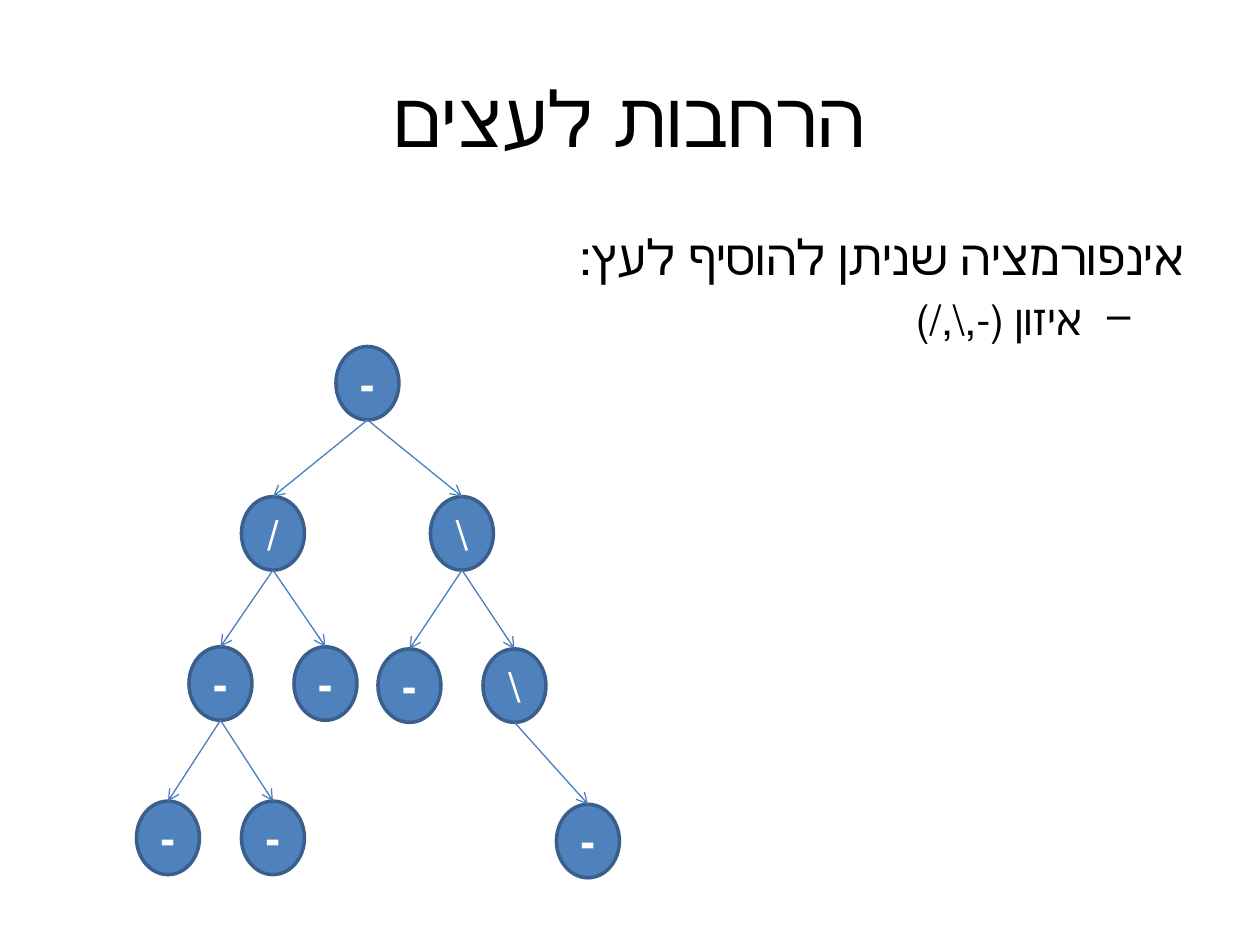
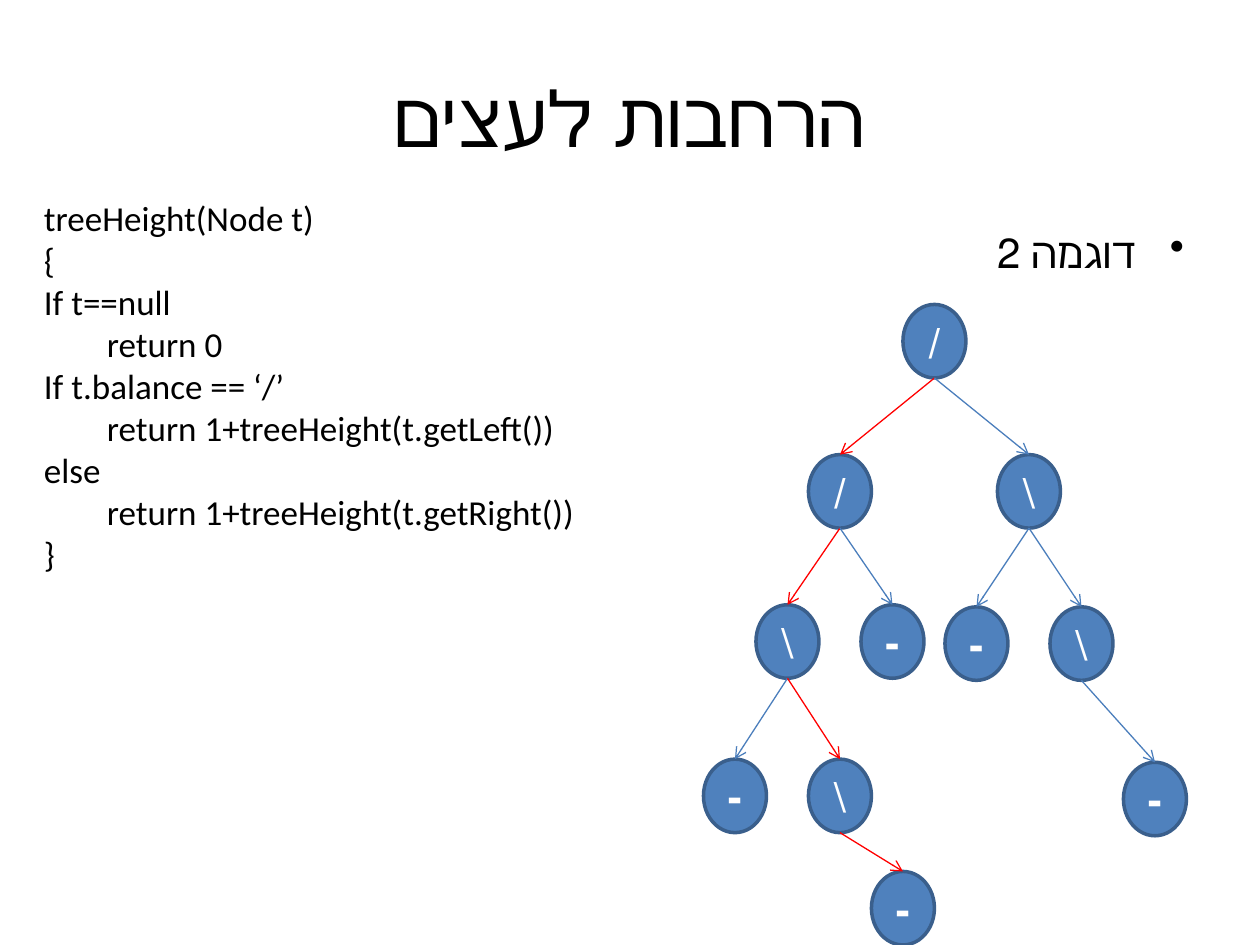
from dataclasses import dataclass

from pptx import Presentation
from pptx import util as u
from pptx.dml.color import RGBColor
from pptx.enum import lang, shapes, text
from pptx.oxml import ns, xmlchemy


@dataclass(frozen=True)
class Theme:
    """Colours, type sizes and line widths shared by all slides."""

    font: str = "Calibri"
    ink: str = "000000"
    light: str = "FFFFFF"
    node: str = "4F81BD"
    rim: str = "3A5F8C"
    edge: str = "4B7EBC"
    trail: str = "FF0000"
    title: int = 44
    lead: int = 28
    body: int = 24
    code: int = 20
    rim_width: float = 2
    edge_width: float = 0.75


@dataclass(frozen=True)
class Line:
    """One paragraph of text, with its indent in inches."""

    words: str
    size: int
    margin: float = 0
    hanging: float = 0
    bullet: str = ""


THEME = Theme()
COLUMNS, ROWS = 120, 90
NODE_WIDTH, NODE_HEIGHT = 6, 7
ALIGN = text.PP_ALIGN
ANCHOR = text.MSO_ANCHOR
TITLE = "הרחבות לעצים"

PLACES = {
    "": (0, 0),
    "L": (-9, 14.3), "R": (9, 14.3),
    "LL": (-14, 28.6), "LR": (-4, 28.6), "RL": (4, 28.8), "RR": (14, 28.8),
    "LLL": (-19, 43.3), "LLR": (-9, 43.3), "RRR": (21, 43.6),
    "LLRR": (-3, 54),
}
BALANCED_SIGNS = {
    "": "-", "L": "/", "R": "\\", "LL": "-", "LR": "-", "RL": "-",
    "RR": "\\", "LLL": "-", "LLR": "-", "RRR": "-",
}
DEEP_SIGNS = BALANCED_SIGNS | {"": "/", "LL": "\\", "LLR": "\\", "LLRR": "-"}
CODE = [
    (0, "treeHeight(Node t)"),
    (0, "{"),
    (0, "If t==null"),
    (1, "return 0"),
    (0, "If t.balance == ‘/’"),
    (1, "return 1+treeHeight(t.getLeft())"),
    (0, "else"),
    (1, "return 1+treeHeight(t.getRight())"),
    (0, "}"),
]


class Slides:
    """Draws styled elements on the current slide, in grid units."""

    def __init__(self, theme):
        """Start an empty deck."""
        self.theme = theme
        self.deck = Presentation()
        self.deck.slide_width, self.deck.slide_height = u.Inches(10), u.Inches(7.5)
        self.page = None

    def x(self, columns):
        """Turn columns into a length."""
        return round(self.deck.slide_width * columns / COLUMNS)

    def y(self, rows):
        """Turn rows into a length."""
        return round(self.deck.slide_height * rows / ROWS)

    def area(self, left, top, width, height):
        """Turn a grid rectangle into lengths."""
        return self.x(left), self.y(top), self.x(width), self.y(height)

    def start(self, title):
        """Add a slide with its title."""
        self.page = self.deck.slides.add_slide(self.deck.slide_layouts[6])
        box = self.text_box(6, 3.6, 108, 15, [Line(title, self.theme.title)], ALIGN.CENTER, True)
        box.text_frame.vertical_anchor = ANCHOR.MIDDLE

    def add_span(self, para, line, align, rtl, colour, bold=False):
        """Fill a paragraph with one styled run."""
        para.alignment = align
        span = para.add_run()
        span.text = line.words
        font = span.font
        font.name, font.size, font.bold = self.theme.font, u.Pt(line.size), bold
        font.color.rgb = RGBColor.from_string(colour)
        font.language_id = lang.MSO_LANGUAGE_ID.HEBREW if rtl else lang.MSO_LANGUAGE_ID.ENGLISH_US
        properties = para._p.get_or_add_pPr()
        properties.set("rtl", str(int(rtl)))
        properties.set("marL", str(u.Inches(line.margin)))
        properties.set("indent", str(u.Inches(-line.hanging)))
        if line.bullet:
            mark = xmlchemy.OxmlElement("a:buChar")
            mark.set("char", line.bullet)
            properties.append(mark)

    def text_box(self, left, top, width, height, lines, align, rtl=False, gap=0):
        """Add a wrapped text box; gap is the space before as a share of the type size."""
        box = self.page.shapes.add_textbox(*self.area(left, top, width, height))
        frame = box.text_frame
        frame.word_wrap = True
        for index, line in enumerate(lines):
            para = frame.add_paragraph() if index else frame.paragraphs[0]
            para.space_before = u.Pt(line.size * gap)
            self.add_span(para, line, align, rtl, self.theme.ink)
        return box

    def bullets(self, left, top, width, height, lines):
        """Add right-to-left body text."""
        self.text_box(left, top, width, height, lines, ALIGN.RIGHT, True, 0.2)

    def code(self, left, top, width, height, lines):
        """Add a code listing indented by level."""
        listing = [Line(words, self.theme.code, level / 2) for level, words in lines]
        box = self.text_box(left, top, width, height, listing, ALIGN.LEFT)
        box.text_frame.auto_size = text.MSO_AUTO_SIZE.SHAPE_TO_FIT_TEXT

    def node(self, centre, top, sign):
        """Add a tree node marked with its balance sign."""
        area = self.area(centre - NODE_WIDTH / 2, top, NODE_WIDTH, NODE_HEIGHT)
        oval = self.page.shapes.add_shape(shapes.MSO_SHAPE.OVAL, *area)
        oval.shadow.inherit = False
        oval.fill.solid()
        oval.fill.fore_color.rgb = RGBColor.from_string(self.theme.node)
        oval.line.color.rgb = RGBColor.from_string(self.theme.rim)
        oval.line.width = u.Pt(self.theme.rim_width)
        oval.text_frame.vertical_anchor = ANCHOR.MIDDLE
        para = oval.text_frame.paragraphs[0]
        self.add_span(para, Line(sign, self.theme.body), ALIGN.CENTER, True, self.theme.light, True)
        return oval

    def edge(self, parent, child, colour):
        """Add an arrow from the foot of a node to the top of its child."""
        start = parent.left + parent.width // 2, parent.top + parent.height
        end = child.left + child.width // 2, child.top
        arrow = self.page.shapes.add_connector(shapes.MSO_CONNECTOR.STRAIGHT, *start, *end)
        arrow.end_connect(child, 0)
        arrow.line.color.rgb = RGBColor.from_string(colour)
        arrow.line.width = u.Pt(self.theme.edge_width)
        head = xmlchemy.OxmlElement("a:tailEnd")
        head.set("type", "arrow")
        properties = arrow._element.spPr
        properties.find(ns.qn("a:ln")).append(head)
        properties.append(xmlchemy.OxmlElement("a:effectLst"))

    def tree(self, centre, top, signs, trail=""):
        """Add a tree keyed by the left and right turns from its root, with one trail picked out."""
        nodes = {}
        for way, sign in signs.items():
            shift, drop = PLACES[way]
            nodes[way] = self.node(centre + shift, top + drop, sign)
            if way:
                colour = self.theme.trail if trail.startswith(way) else self.theme.edge
                self.edge(nodes[way[:-1]], nodes[way], colour)


def main():
    """Build both slides and save them."""
    slides = Slides(THEME)
    slides.start(TITLE)
    slides.bullets(6, 21, 108, 59.4, [
        Line("אינפורמציה שניתן להוסיף לעץ:", THEME.lead),
        Line("איזון (-,\\,/)", THEME.body, 0.81, 0.38, "–"),
    ])
    slides.tree(35, 33, BALANCED_SIGNS)

    slides.start(TITLE)
    slides.bullets(56, 21, 58, 8, [Line("דוגמה 2", THEME.body, 0.38, 0.38, "•")])
    slides.code(3, 18.1, 56, 37.6, CODE)
    slides.tree(89, 29, DEEP_SIGNS, "LLRR")
    slides.deck.save("out.pptx")


if __name__ == "__main__":
    main()
